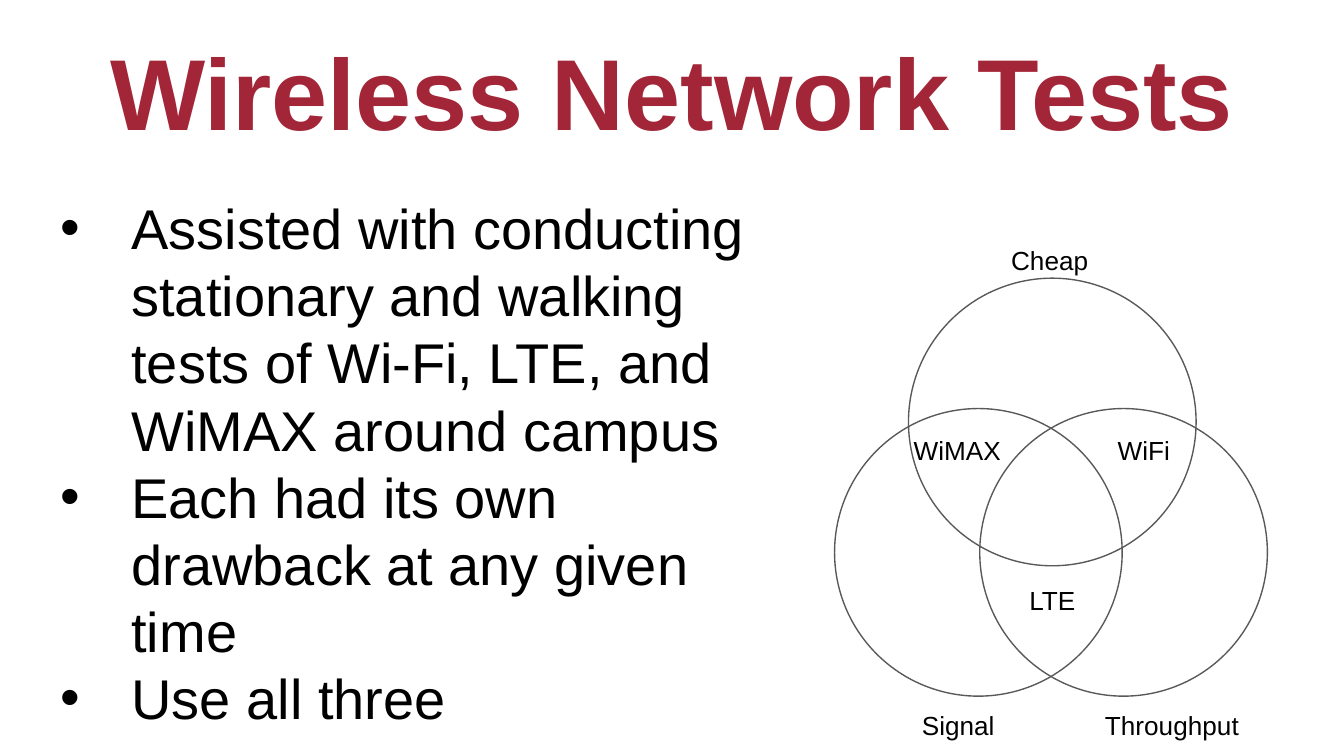
"""Build the Wireless Network Tests slide with its three-circle Venn diagram."""
from dataclasses import dataclass

from lxml import etree
from pptx import Presentation
from pptx import util as u
from pptx.dml.color import RGBColor
from pptx.enum import shapes, text
from pptx.oxml import ns


@dataclass(frozen=True)
class Theme:
    font: str = "Arial"
    ink: RGBColor = RGBColor(0, 0, 0)
    crimson: RGBColor = RGBColor(0xA3, 0x26, 0x38)
    outline: RGBColor = RGBColor(0x59, 0x59, 0x59)
    title: u.Pt = u.Pt(54)
    body: u.Pt = u.Pt(30)
    leading: u.Pt = u.Pt(36)
    label: u.Pt = u.Pt(14)


theme = Theme()
deck = Presentation()
deck.slide_width = u.Inches(10)
deck.slide_height = deck.slide_width * 9 // 16
slide = deck.slides.add_slide(deck.slide_layouts[6])


def add_text(lines, box, size, color, align, inset_x, inset_y):
    frame = slide.shapes.add_textbox(*map(u.Inches, box)).text_frame
    frame.word_wrap = True
    frame.margin_left = frame.margin_right = u.Inches(inset_x)
    frame.margin_top = frame.margin_bottom = u.Inches(inset_y)
    frame.text = "\n".join(lines)
    for paragraph in frame.paragraphs:
        paragraph.alignment = align
        paragraph.font.name = theme.font
        paragraph.font.size = size
        paragraph.font.color.rgb = color
    return frame


LEFT, CENTER = text.PP_ALIGN.LEFT, text.PP_ALIGN.CENTER

findings = add_text(
    [
        "Assisted with conducting stationary and walking tests of Wi-Fi, LTE, and WiMAX around campus",
        "Each had its own drawback at any given time",
        "Use all three",
    ],
    (0.26, 1.39, 5.82, 4.05), theme.body, theme.ink, LEFT, 0.1, 0.05,
)
for finding in findings.paragraphs:
    finding.line_spacing = theme.leading
    properties = finding._p.get_or_add_pPr()
    properties.set("marL", str(u.Inches(0.62)))
    properties.set("indent", str(u.Inches(-0.53)))
    spacing = properties.find(ns.qn("a:lnSpc"))
    spacing.addnext(etree.Element(ns.qn("a:buChar"), char="•"))
    spacing.addnext(etree.Element(ns.qn("a:buFont"), typeface=theme.font))

title = add_text(["Wireless Network Tests"], (0.26, 0.04, 9.48, 1.26),
                 theme.title, theme.crimson, CENTER, 0, 0)
title.vertical_anchor = text.MSO_ANCHOR.MIDDLE
title.paragraphs[0].font.bold = True

diameter = u.Inches(2.14)
for left, top in [(6.76, 2.07), (6.21, 3.04), (7.29, 3.04)]:
    circle = slide.shapes.add_shape(
        shapes.MSO_SHAPE.OVAL, u.Inches(left), u.Inches(top), diameter, diameter)
    circle.shadow.inherit = False
    circle.fill.background()
    circle.line.color.rgb = theme.outline
    circle.line.width = u.Pt(0.75)

for name, left, top, width, height, align in [
    ("Cheap", 7.15, 1.72, 1.32, 0.35, CENTER),
    ("Signal", 6.47, 5.18, 1.32, 0.35, CENTER),
    ("Throughput", 8.06, 5.18, 1.32, 0.35, CENTER),
    ("WiMAX", 6.7, 3.13, 0.96, 0.54, LEFT),
    ("LTE", 7.17, 4.25, 1.32, 0.35, CENTER),
    ("WiFi", 7.85, 3.13, 1.32, 0.35, CENTER),
]:
    add_text([name], (left, top, width, height), theme.label, theme.ink, align, 0.1, 0.1)

deck.save("out.pptx")
